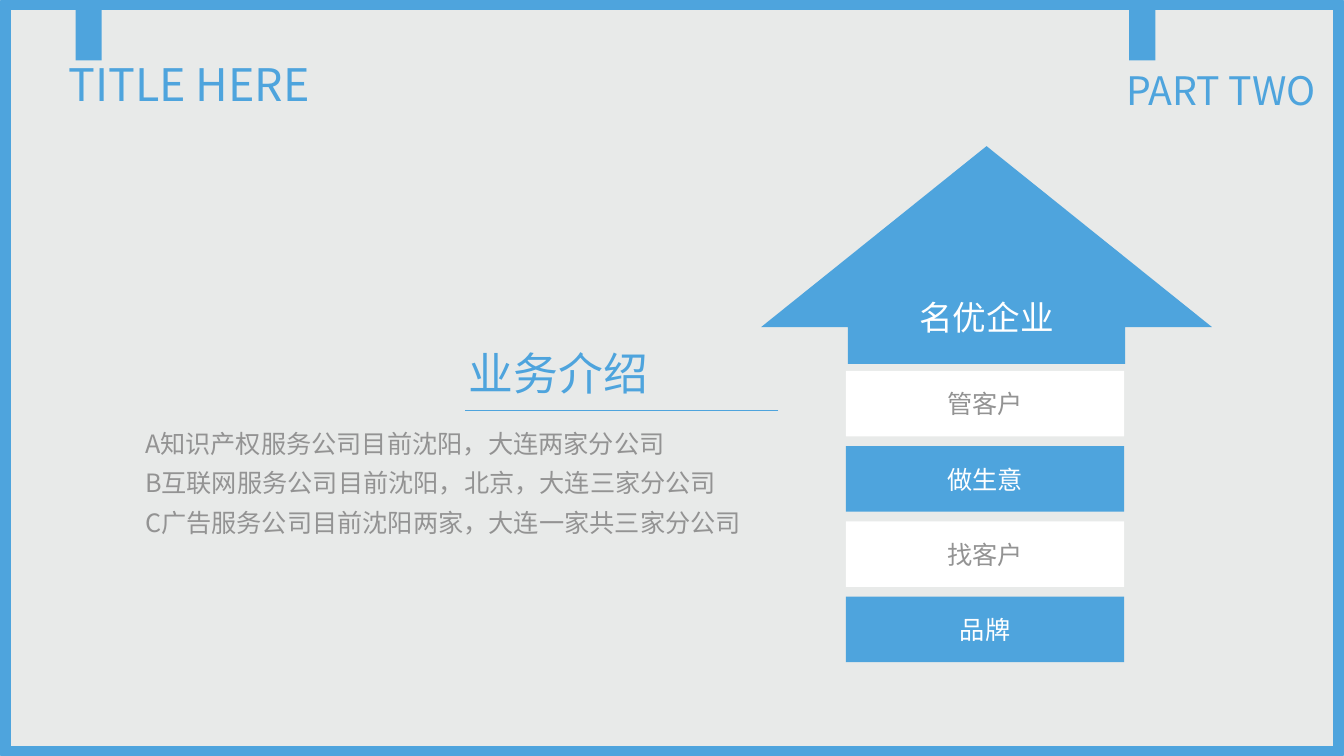
from lxml import etree
from pptx import Presentation
from pptx.dml.color import RGBColor
from pptx.enum import shapes, text
from pptx.oxml.ns import qn
from pptx.util import Inches, Pt

BLUE, GREY, WHITE, PALE = "4EA4DD", "939393", "FFFFFF", "E8EAE9"
FONT = "Noto Sans CJK SC"
KIND, ALIGN = shapes.MSO_SHAPE, text.PP_ALIGN


def rgb(value):
    return RGBColor.from_string(value)


class Painter:
    def __init__(self, slide, font):
        self.s, self.font = slide, font

    def background(self, color):
        fill = self.s.background.fill
        fill.solid()
        fill.fore_color.rgb = rgb(color)

    def shape(self, box, fill=None, line=None, width=1, kind=KIND.RECTANGLE):
        sp = self.s.shapes.add_shape(kind, *map(Inches, box))
        sp.shadow.inherit = False
        if fill:
            sp.fill.solid()
            sp.fill.fore_color.rgb = rgb(fill)
        else:
            sp.fill.background()
        if line:
            sp.line.color.rgb = rgb(line)
            sp.line.width = Pt(width)
        else:
            sp.line.fill.background()
        return sp

    def add_text(self, sp, lines, size, color, align=ALIGN.LEFT, spacing=1.0,
                 anchor=text.MSO_ANCHOR.MIDDLE):
        tf = sp.text_frame
        tf.word_wrap = True
        tf.vertical_anchor = anchor
        for i, line in enumerate(lines):
            p = tf.add_paragraph() if i else tf.paragraphs[0]
            p.alignment, p.line_spacing = align, spacing
            r = p.add_run()
            r.text = line
            r.font.size, r.font.name = Pt(size), self.font
            r.font.color.rgb = rgb(color)
            ea = etree.SubElement(r.font._element, qn("a:ea"))
            ea.set("typeface", self.font)
        return tf

    def textbox(self, box, lines, size, color, **style):
        sp = self.s.shapes.add_textbox(*map(Inches, box))
        return self.add_text(sp, lines, size, color,
                             anchor=text.MSO_ANCHOR.TOP, **style)

    def line(self, x1, y1, x2, y2, color, width):
        cx = self.s.shapes.add_connector(
            shapes.MSO_CONNECTOR.STRAIGHT, *map(Inches, (x1, y1, x2, y2)))
        cx.line.color.rgb = rgb(color)
        cx.line.width = Pt(width)
        etree.SubElement(cx._element.spPr, qn("a:effectLst"))


def main():
    prs = Presentation()
    prs.slide_width, prs.slide_height = Inches(13.33), Inches(7.5)
    s = Painter(prs.slides.add_slide(prs.slide_layouts[6]), FONT)

    s.background(PALE)
    s.shape((0.05, 0.04, 13.23, 7.42), line=BLUE, width=8.5)
    for tab_left in (0.75, 11.2):
        s.shape((tab_left, 0.04, 0.26, 0.56), fill=BLUE)

    headings = [("PART TWO", (11.07, 0.71, 2.26, 0.42), 28),
                ("TITLE HERE", (0.58, 0.62, 6.97, 0.56), 32)]
    for heading, box, size in headings:
        tf = s.textbox(box, [heading], size, BLUE, spacing=0.9)
        tf.margin_top = 0

    steps = ["管客户", "做生意", "找客户", "品牌"]
    first_top, last_top = 3.68, 5.92
    pitch = (last_top - first_top) / (len(steps) - 1)
    for i, step in enumerate(steps):
        fill, color = [(WHITE, GREY), (BLUE, WHITE)][i % 2]
        bar = s.shape((8.39, first_top + i * pitch, 2.76, 0.65), fill=fill)
        s.add_text(bar, [step], 18, color, align=ALIGN.CENTER)

    arrow = s.shape((7.55, 1.45, 4.47, 2.16), fill=BLUE, kind=KIND.UP_ARROW)
    arrow.adjustments[0], arrow.adjustments[1] = 0.615, 0.831
    s.add_text(arrow, ["名优企业"], 24, WHITE, align=ALIGN.CENTER, spacing=1.3)

    s.textbox((1.34, 4.11, 6.5, 1.28),
              ["A知识产权服务公司目前沈阳，大连两家分公司",
               "B互联网服务公司目前沈阳，北京，大连三家分公司",
               "C广告服务公司目前沈阳两家，大连一家共三家分公司"],
              18, GREY, align=ALIGN.JUSTIFY, spacing=1.3)
    s.textbox((4.55, 3.38, 3.56, 0.64), ["业务介绍"], 32, BLUE)
    s.line(7.72, 4.07, 4.61, 4.07, BLUE, 0.5)

    prs.save("out.pptx")


if __name__ == "__main__":
    main()
